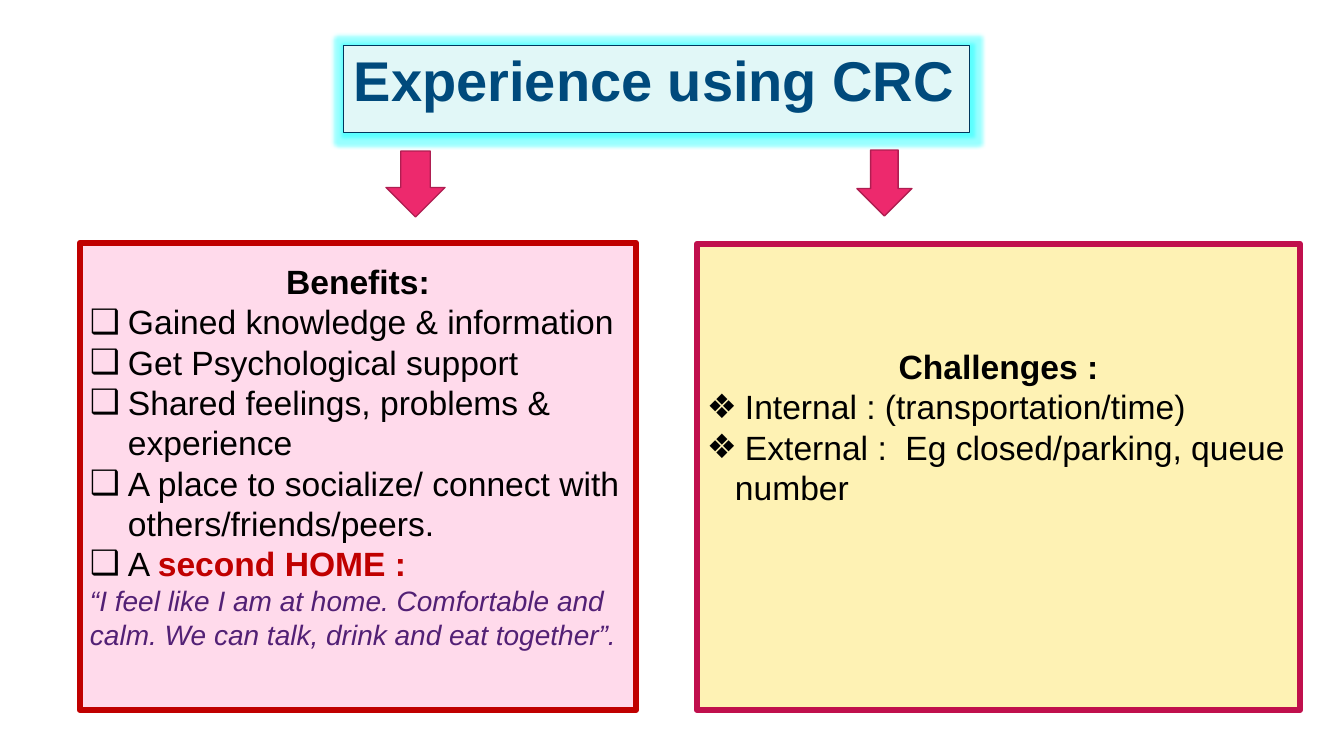
from lxml import etree
from pptx import Presentation
from pptx.dml.color import RGBColor
from pptx.enum.shapes import MSO_SHAPE
from pptx.enum.text import MSO_ANCHOR, PP_ALIGN
from pptx.oxml.ns import qn
from pptx.util import Pt

RECTANGLE = MSO_SHAPE.RECTANGLE
DOWN_ARROW = MSO_SHAPE.DOWN_ARROW
TOP = MSO_ANCHOR.TOP
LEFT = PP_ALIGN.LEFT
CENTER = PP_ALIGN.CENTER

EMU_PER_PX = 914400 / 100.8
COLOURS = {
    "title": "004A7C", "title_fill": "E1F7F7", "title_line": "00375D", "glow": "00FFFF",
    "text": "000000", "home": "C00000", "quote": "522075",
    "benefits_fill": "FFDAEB", "challenges_fill": "FEF2B4", "challenges_line": "C0104D",
    "arrow_fill": "ED296D", "arrow_line": "AF1E51",
}


def px(length):
    return round(length * EMU_PER_PX)


def rgb(name):
    return RGBColor.from_string(COLOURS[name])


class SlideBuilder:
    font = "Arial"

    def __init__(self, page):
        self.page = page

    def shape(self, kind, left, top, width, height, fill, line, weight):
        shape = self.page.shapes.add_shape(kind, px(left), px(top), px(width), px(height))
        shape.shadow.inherit = False
        shape.fill.solid()
        shape.fill.fore_color.rgb = rgb(fill)
        shape.line.color.rgb = rgb(line)
        shape.line.width = Pt(weight)
        return shape

    def box(self, left, top, width, height, fill, line, weight, inset_top):
        box = self.shape(RECTANGLE, left, top, width, height, fill, line, weight)
        frame = box.text_frame
        frame.word_wrap = True
        frame.vertical_anchor = TOP
        frame.margin_left = frame.margin_right = px(10)
        frame.margin_top = px(inset_top)
        frame.margin_bottom = 0
        return box

    def glow(self, box, radius):
        effects = box._element.spPr.find(qn("a:effectLst"))
        glow = etree.SubElement(effects, qn("a:glow"), rad=str(px(radius)))
        colour = etree.SubElement(glow, qn("a:srgbClr"), val=COLOURS["glow"])
        etree.SubElement(colour, qn("a:alpha"), val="40000")

    def para(self, box, spacing, align=LEFT, indent=0, bullet=None):
        frame = box.text_frame
        para = frame.paragraphs[0]
        if para.runs:
            para = frame.add_paragraph()
        para.alignment = align
        para.line_spacing = spacing
        properties = para._p.get_or_add_pPr()
        properties.set("marL", str(px(indent)))
        if bullet:
            properties.set("indent", str(-px(indent)))
            etree.SubElement(properties, qn("a:buFont"), typeface=self.font)
            etree.SubElement(properties, qn("a:buChar"), char=bullet)
        return para

    def span(self, para, text, size=24, colour="text", bold=False, italic=False):
        span = para.add_run()
        span.text = text
        span.font.name = self.font
        span.font.size = Pt(size)
        span.font.bold = bold
        span.font.italic = italic
        span.font.color.rgb = rgb(colour)

    def bullet_list(self, box, heading, bullet, items):
        self.span(self.para(box, Pt(28.8), CENTER), heading, bold=True)
        for item in items:
            para = self.para(box, Pt(28.8), indent=38, bullet=bullet)
            self.span(para, item)
        return para


def main():
    deck = Presentation()
    deck.slide_width = px(1344)
    deck.slide_height = px(756)
    slide = SlideBuilder(deck.slides.add_slide(deck.slide_layouts[6]))

    title = slide.box(344, 46, 626, 87, "title_fill", "title_line", 0.75, 7)
    slide.glow(title, 8)
    slide.span(slide.para(title, 0.9), "Experience using CRC", 40, "title", bold=True)

    benefits = slide.box(80, 243, 556, 467, "benefits_fill", "home", 4.5, 18)
    home = slide.bullet_list(benefits, "Benefits:", "❑", [
        "Gained knowledge & information",
        "Get Psychological support",
        "Shared feelings, problems & experience",
        "A place to socialize/ connect with others/friends/peers.",
        "A ",
    ])
    slide.span(home, "second HOME :", colour="home", bold=True)
    slide.span(
        slide.para(benefits, Pt(24.3)),
        "“I feel like I am at home. Comfortable and calm. We can talk, drink and eat together”.",
        20, "quote", italic=True,
    )

    challenges = slide.box(697, 244, 603, 466, "challenges_fill", "challenges_line", 4.5, 102)
    slide.bullet_list(challenges, "Challenges :", "❖", [
        "Internal : (transportation/time)",
        "External :  Eg closed/parking, queue",
    ])
    slide.span(slide.para(challenges, Pt(28.8), indent=28), "number")

    for left, top, width in ((386, 151, 59), (857, 150, 55)):
        slide.shape(DOWN_ARROW, left, top, width, 66, "arrow_fill", "arrow_line", 1)

    deck.save("out.pptx")


if __name__ == "__main__":
    main()
